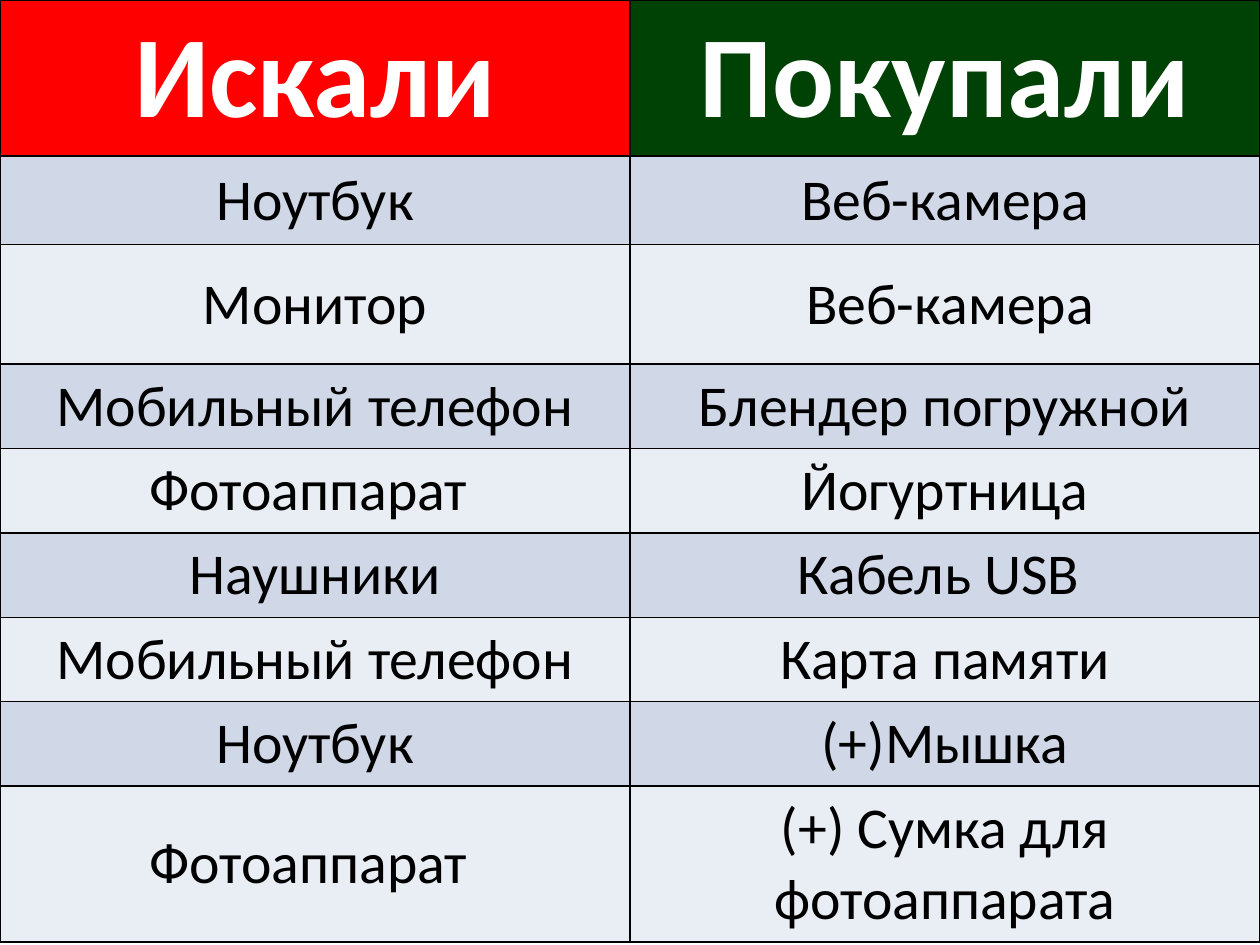
from lxml.etree import SubElement
from pptx import Presentation
from pptx.dml.color import RGBColor
from pptx.enum.text import MSO_ANCHOR as Anchor, PP_ALIGN as Align
from pptx.oxml.ns import qn
from pptx.util import Inches, Pt

WHITE = RGBColor(0xFF, 0xFF, 0xFF)
BLACK = RGBColor(0x00, 0x00, 0x00)
RED = RGBColor(0xFF, 0x00, 0x00)
GREEN = RGBColor(0x00, 0x42, 0x06)
BANDS = (RGBColor(0xD0, 0xD8, 0xE8), RGBColor(0xE9, 0xED, 0xF4))

HEADERS = (("Искали", RED), ("Покупали", GREEN))
# Searched item, bought item, row height in inches
PURCHASES = (
    ("Ноутбук", "Веб-камера", 0.7),
    ("Монитор", "Веб-камера", 0.95),
    ("Мобильный телефон", "Блендер погружной", 0.67),
    ("Фотоаппарат ", "Йогуртница", 0.67),
    ("Наушники", "Кабель USB ", 0.67),
    ("Мобильный телефон", "Карта памяти", 0.67),
    ("Ноутбук", "(+)Мышка", 0.67),
    ("Фотоаппарат ", "(+) Cумка для фотоаппарата", 1.24),
)
HEADER_HEIGHT = 1.24


def write_text(text_frame, text, *, size, color, bold=False, font="Calibri"):
    paragraph = text_frame.paragraphs[0]
    paragraph.alignment = Align.CENTER
    run = paragraph.add_run()
    run.text = text
    run.font.name = font
    run.font.size = Pt(size)
    run.font.bold = bold
    run.font.color.rgb = color


class SlideBuilder:
    header_size = 66
    body_size = 33
    border_color = BLACK
    border_width = Pt(1)

    def __init__(self, slide):
        self.slide = slide

    def add_table(self, left, top, width, height, row_heights, column_count):
        frame = self.slide.shapes.add_table(
            len(row_heights), column_count, left, top, width, height)
        table = frame.table
        table.horz_banding = False
        for column in table.columns:
            column.width = width // column_count
        for row, row_height in zip(table.rows, row_heights):
            row.height = Inches(row_height)
        return table

    def add_borders(self, cell):
        properties = cell._tc.get_or_add_tcPr()
        for position, side in enumerate(("lnL", "lnR", "lnT", "lnB")):
            line = SubElement(properties, qn(f"a:{side}"), w=str(self.border_width))
            fill = SubElement(line, qn("a:solidFill"))
            SubElement(fill, qn("a:srgbClr"), val=str(self.border_color))
            properties.insert(position, line)

    def fill_cell(self, cell, text, fill, **text_format):
        cell.fill.solid()
        cell.fill.fore_color.rgb = fill
        cell.vertical_anchor = Anchor.MIDDLE
        self.add_borders(cell)
        write_text(cell.text_frame, text, **text_format)

    def header_cell(self, cell, text, fill):
        self.fill_cell(cell, text, fill, size=self.header_size, color=WHITE, bold=True)

    def body_cell(self, cell, text, fill):
        self.fill_cell(cell, text, fill, size=self.body_size, color=BLACK)


def main():
    presentation = Presentation()
    presentation.slide_width = Inches(10)
    presentation.slide_height = Inches(7.5)
    builder = SlideBuilder(presentation.slides.add_slide(presentation.slide_layouts[6]))

    # Table grid over the whole slide
    row_heights = [HEADER_HEIGHT] + [height for *_, height in PURCHASES]
    table = builder.add_table(0, 0, Inches(10), Inches(7.5), row_heights, len(HEADERS))

    # Header row
    for column, (title, fill) in enumerate(HEADERS):
        builder.header_cell(table.cell(0, column), title, fill)

    # Banded body rows
    for row, (searched, bought, _) in enumerate(PURCHASES, start=1):
        band = BANDS[(row - 1) % 2]
        for column, item in enumerate((searched, bought)):
            builder.body_cell(table.cell(row, column), item, band)

    # The monitor's purchase has its own narrow margins
    webcam = table.cell(2, 1)
    webcam.margin_left = Inches(0.09)
    webcam.margin_top = webcam.margin_right = Inches(0.01)
    webcam.margin_bottom = 0

    presentation.save("out.pptx")


if __name__ == "__main__":
    main()
